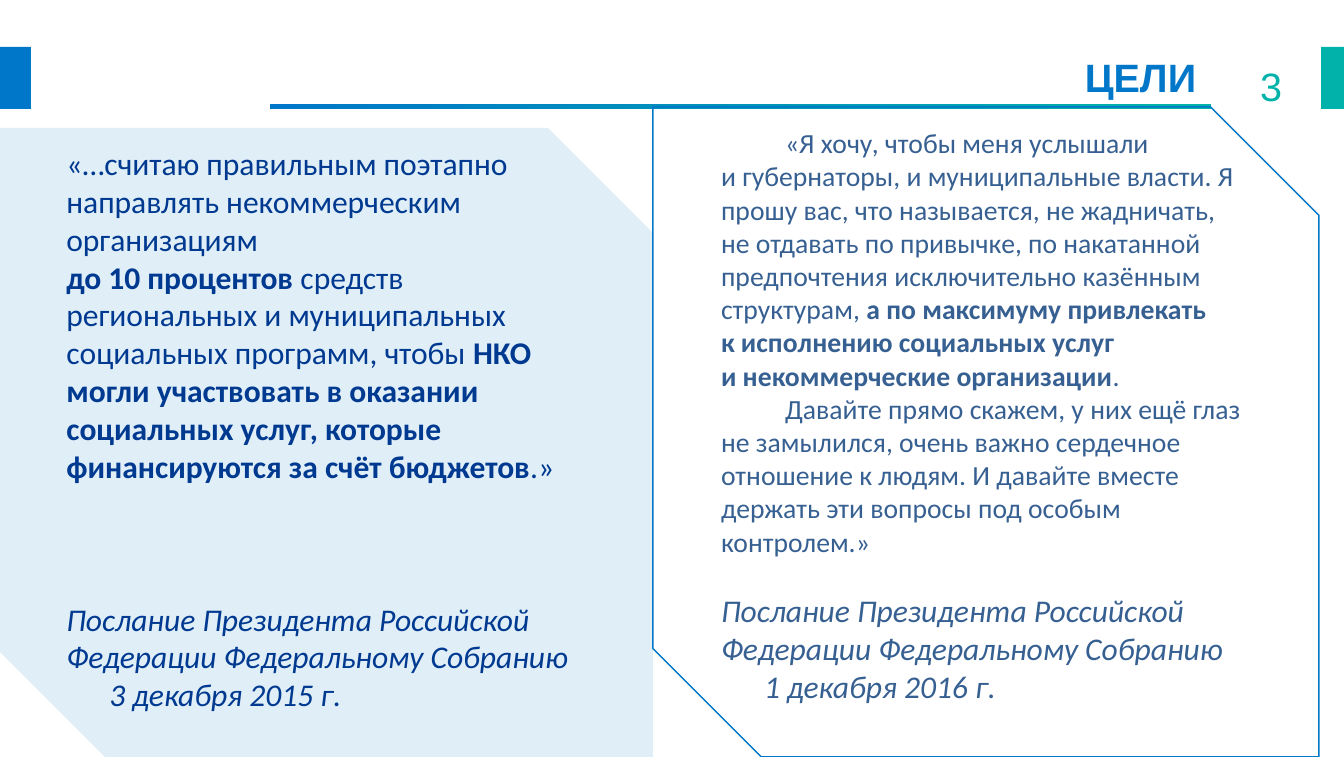
from dataclasses import dataclass
from lxml import etree
from pptx import Presentation
from pptx.dml.color import RGBColor
from pptx.enum.shapes import MSO_SHAPE
from pptx.enum.text import MSO_ANCHOR, PP_ALIGN
from pptx.oxml.ns import qn
from pptx.util import Pt

RECT = MSO_SHAPE.RECTANGLE
SNIP = MSO_SHAPE.SNIP_2_DIAG_RECTANGLE
MID, TOP = MSO_ANCHOR.MIDDLE, MSO_ANCHOR.TOP
LEFT, CENTER, RIGHT = PP_ALIGN.LEFT, PP_ALIGN.CENTER, PP_ALIGN.RIGHT
PX = 6430
GLUE = chr(160)


@dataclass
class Theme:
    blue: RGBColor = RGBColor.from_string("0077C8")
    teal: RGBColor = RGBColor.from_string("00B2A9")
    navy: RGBColor = RGBColor.from_string("003990")
    slate: RGBColor = RGBColor.from_string("376092")
    head: int = 20
    large: int = 16
    small: int = 14
    sans: str = "Arial"
    body: str = "Calibri"


theme = Theme()
deck = Presentation()
deck.slide_width, deck.slide_height = 1344 * PX, 757 * PX
slide = deck.slides.add_slide(deck.slide_layouts[6])


def add_form(kind, box, fill=None):
    form = slide.shapes.add_shape(kind, *[n * PX for n in box])
    form.shadow.inherit = False
    form.line.fill.background()
    if fill is None:
        form.fill.background()
    else:
        form.fill.solid()
        form.fill.fore_color.rgb = fill
    return form


def add_run(para, text, face, size, color, bold=False, slant=False):
    run = para.add_run()
    run.text = text.replace("~", GLUE)
    font = run.font
    font.name, font.size = face, Pt(size)
    font.bold, font.italic = bold, slant
    font.color.rgb = color


add_form(RECT, (0, 47, 31, 62), theme.blue)
add_form(RECT, (1321, 47, 23, 62), theme.teal)

bar = add_form(RECT, (270, 104, 941, 5))
bar.fill.gradient()
bar.fill.gradient_angle = 0
for stop, color, place in zip(bar.fill.gradient_stops, (theme.blue, theme.teal), (0, 1)):
    stop.color.rgb = color
    stop.position = place

heads = [
    ("ЦЕЛИ", (1072, 47, 137, 60), CENTER, theme.blue, True, 0, 6),
    ("3", (1233, 55, 63, 40), RIGHT, theme.teal, False, 14, 7),
]
for text, box, align, color, bold, side, inset in heads:
    label = slide.shapes.add_textbox(*[n * PX for n in box])
    frame = label.text_frame
    frame.word_wrap = True
    frame.vertical_anchor = TOP
    frame.margin_left = frame.margin_right = side * PX
    frame.margin_top = frame.margin_bottom = inset * PX
    para = frame.paragraphs[0]
    para.alignment = align
    add_run(para, text, theme.sans, theme.head, color, bold)

source = "Послание Президента Российской Федерации Федеральному Собранию"
left = add_form(SNIP, (0, 128, 653, 629), theme.blue)
tint = left.fill._xPr.find(qn("a:solidFill"))[0]
etree.SubElement(tint, qn("a:alpha")).set("val", "12000")
right = add_form(SNIP, (653, 107, 666, 650))
right.line.color.rgb = theme.blue
right.line.width = Pt(0.75)

panels = [
    (left, theme.navy, theme.large, 0, 58, 35, "3 декабря 2015 г.", [
        [("«…считаю правильным поэтапно направлять некоммерческим организациям", False),
         None,
         ("до~10 процентов ", True),
         ("средств региональных и~муниципальных социальных программ, чтобы ", False),
         ("НКО могли участвовать в~оказании социальных услуг, которые "
          "финансируются за~счёт бюджетов", True),
         (".»", False)],
    ]),
    (right, theme.slate, theme.small, 64, 17, 40, "1 декабря 2016 г.", [
        [("«Я хочу, чтобы меня услышали и~губернаторы, и~муниципальные власти. "
          "Я прошу вас, что называется, не~жадничать, не~отдавать по~привычке, "
          "по~накатанной предпочтения исключительно казённым структурам, ", False),
         ("а~по~максимуму привлекать к~исполнению социальных услуг "
          "и~некоммерческие организации", True),
         (".", False)],
        [("Давайте прямо скажем, у~них ещё глаз не~замылился, очень важно "
          "сердечное отношение к~людям. И~давайте вместе держать эти вопросы "
          "под особым контролем.»", False)],
    ]),
]
for panel, color, size, indent, gap, foot, date, quote in panels:
    frame = panel.text_frame
    frame.word_wrap = True
    frame.vertical_anchor = MID
    frame.margin_bottom = foot * PX
    rows = [(runs, size, indent, 0, False) for runs in quote]
    rows.append(([(source, False)], theme.large, 0, gap, True))
    rows.append(([(date, False)], theme.large, 43, 0, True))
    for index, (runs, points, shift, space, slant) in enumerate(rows):
        para = frame.add_paragraph() if index else frame.paragraphs[0]
        para.alignment = LEFT
        para.space_before = Pt(space)
        para._p.get_or_add_pPr().set("indent", str(shift * PX))
        for part in runs:
            if part is None:
                para.add_line_break()
            else:
                text, bold = part
                add_run(para, text, theme.body, points, color, bold, slant)

deck.save("out.pptx")
